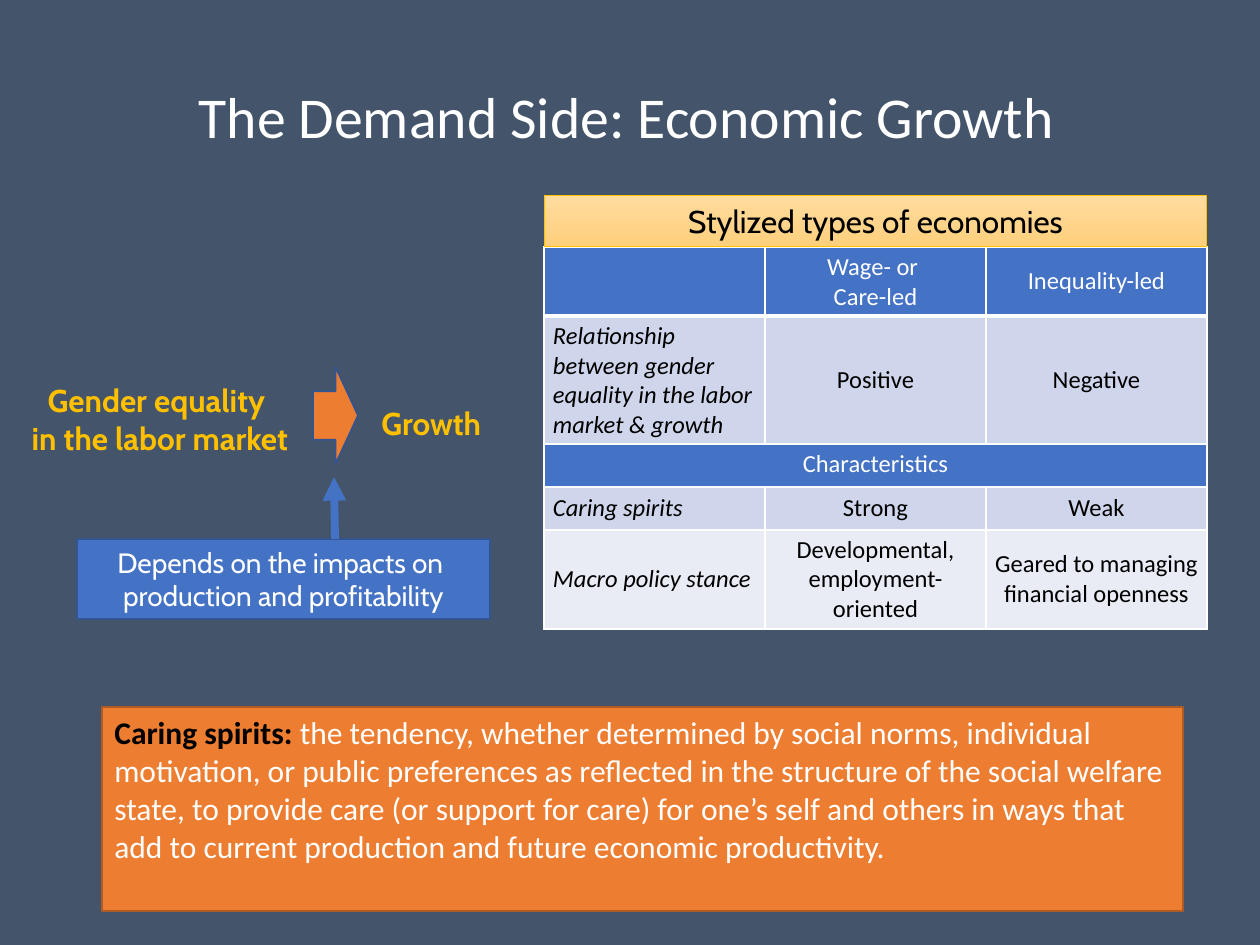
from lxml import etree
from pptx import Presentation
from pptx.dml.color import RGBColor
from pptx.enum.shapes import MSO_CONNECTOR, MSO_SHAPE
from pptx.enum.text import MSO_ANCHOR, PP_ALIGN
from pptx.oxml.ns import qn
from pptx.util import Emu, Pt

LEFT, MID = PP_ALIGN.LEFT, PP_ALIGN.CENTER
TOP, CENTER = MSO_ANCHOR.TOP, MSO_ANCHOR.MIDDLE
RECT, ARROW = MSO_SHAPE.RECTANGLE, MSO_SHAPE.UP_ARROW
STRAIGHT = MSO_CONNECTOR.STRAIGHT
WHITE = RGBColor(0xFF, 0xFF, 0xFF)
BLACK = RGBColor(0, 0, 0)
SLATE = RGBColor(0x44, 0x54, 0x6A)
BLUE = RGBColor(0x44, 0x72, 0xC4)
NAVY = RGBColor(0x32, 0x54, 0x91)
ORANGE = RGBColor(0xED, 0x7D, 0x31)
RUST = RGBColor(0xAF, 0x5C, 0x24)
GOLD = RGBColor(0xFF, 0xC0, 0x00)
CREAM = RGBColor(0xFF, 0xDB, 0x9E)
SAND = RGBColor(0xFF, 0xD0, 0x7C)
PALE = RGBColor(0xCF, 0xD5, 0xEA)
MIST = RGBColor(0xE9, 0xEB, 0xF5)

ROWS = [
    (69, BLUE, ["", "Wage- or \nCare-led", "Inequality-led"]),
    (128, PALE, ["Relationship between gender equality in the labor market & growth",
                 "Positive", "Negative"]),
    (43, BLUE, ["Characteristics", "", ""]),
    (43, PALE, ["Caring spirits", "Strong", "Weak"]),
    (99, MIST, ["Macro policy stance", "Developmental, employment-oriented",
                "Geared to managing financial openness"]),
]
TERM = "Caring spirits: "
SENSE = ("the tendency, whether determined by social norms, individual motivation, "
         "or public preferences as reflected in the structure of the social welfare "
         "state, to provide care (or support for care) for one’s self and others in "
         "ways that add to current production and future economic productivity.")


def px(n):
    """Turn pixels into EMU."""
    return Emu(round(n * 914400 / 126))


def style(font, size, color, face, bold=False, italic=False):
    """Set the look of a font."""
    font.size, font.name, font.bold, font.italic = Pt(size), face, bold, italic
    font.color.rgb = color


def write(frame, text, size, color, face, align=MID, **look):
    """Fill a text frame, one paragraph for each line."""
    frame.word_wrap = True
    for i, line in enumerate(text.split("\n")):
        par = frame.add_paragraph() if i else frame.paragraphs[0]
        par.text, par.alignment = line, align
        style(par.font, size, color, face, **look)


def label(shapes, box, *text, **look):
    """Add a text box and return its frame."""
    frame = shapes.add_textbox(*map(px, box)).text_frame
    write(frame, *text, **look)
    return frame


def block(shapes, kind, box, fill, edge, width=1):
    """Add a filled shape with an outline."""
    shape = shapes.add_shape(kind, *map(px, box))
    shape.shadow.inherit = False
    shape.fill.solid()
    shape.fill.fore_color.rgb = fill
    shape.line.color.rgb, shape.line.width = edge, Pt(width)
    shape.text_frame.vertical_anchor = TOP
    return shape


def border(cell, base):
    """Draw white cell borders with the given bottom width."""
    props = cell._tc.get_or_add_tcPr()
    for i, (side, width) in enumerate(zip("LRTB", (1, 1, 1, base))):
        line = etree.Element(qn(f"a:ln{side}"), w=str(Pt(width)))
        fill = etree.SubElement(line, qn("a:solidFill"))
        etree.SubElement(fill, qn("a:srgbClr"), val=str(WHITE))
        props.insert(i, line)


def title(shapes, box):
    """Place the slide title."""
    frame = label(shapes, box, "The Demand Side: Economic Growth", 33, WHITE, "Calibri")
    frame.vertical_anchor = CENTER
    frame.paragraphs[0].line_spacing = 0.9


def types(shapes, box):
    """Place the table of economy types under its banner."""
    x, y, w, h = box
    head = 51
    table = shapes.add_table(len(ROWS), 3, *map(px, (x, y + head, w, h - head))).table
    table.first_row = table.horz_banding = False
    for col in table.columns:
        col.width = px(w / 3)
    for r, (tall, fill, texts) in enumerate(ROWS):
        table.rows[r].height = px(tall)
        for c, text in enumerate(texts):
            cell = table.cell(r, c)
            cell.margin_left = cell.margin_right = px(9)
            cell.margin_top = cell.margin_bottom = px(5)
            cell.vertical_anchor = TOP if c == 0 and r in (1, 2) else CENTER
            cell.fill.solid()
            cell.fill.fore_color.rgb = fill
            side = c == 0 and fill != BLUE
            write(cell.text_frame, text, 14, WHITE if fill == BLUE else BLACK,
                  "Calibri", LEFT if side else MID, italic=side)
            border(cell, 1 if r else 3)
    table.cell(2, 0).merge(table.cell(2, 2))
    banner = block(shapes, RECT, (x, y, w, head), CREAM, GOLD, 0.5)
    banner.fill.gradient()
    banner.fill.gradient_angle = 270
    for stop, color in zip(banner.fill.gradient_stops, (CREAM, SAND)):
        stop.color.rgb = color
    write(banner.text_frame, "Stylized types of economies", 18, BLACK, "Cabin")


def note(shapes, box):
    """Place the definition of caring spirits."""
    frame = block(shapes, RECT, box, ORANGE, RUST).text_frame
    frame.word_wrap = True
    par = frame.paragraphs[0]
    par.alignment = LEFT
    for text, color, bold in ((TERM, BLACK, True), (SENSE, WHITE, False)):
        run = par.add_run()
        run.text = text
        style(run.font, 18, color, "Calibri", bold)


def flow(shapes, box):
    """Place the link from equality to growth and its condition."""
    x, y = box[:2]
    parts = shapes.add_group_shape().shapes
    label(parts, (x, y, 352, 89), "Gender equality \nin the labor market",
          18, GOLD, "Cabin", bold=True)
    base = block(parts, RECT, (x + 93, y + 164, 413, 80), BLUE, NAVY)
    write(base.text_frame, "Depends on the impacts on \nproduction and profitability",
          16, WHITE, "Cabin")
    arrow = block(parts, ARROW, (x + 303, y + 18, 97, 45), ORANGE, NAVY)
    arrow.rotation = 90
    label(parts, (x + 385, y + 23, 175, 50), "Growth", 18, GOLD, "Cabin", LEFT, bold=True)
    ends = (x + 351, y + 164, x + 350, y + 102)
    link = parts.add_connector(STRAIGHT, *map(px, ends))
    link.line.color.rgb, link.line.width = BLUE, Pt(4.5)
    etree.SubElement(link.line._get_or_add_ln(), qn("a:tailEnd"), type="triangle")
    etree.SubElement(link._element.spPr, qn("a:effectLst"))


def main():
    """Build and save the slide."""
    deck = Presentation()
    deck.slide_width, deck.slide_height = px(1260), px(945)
    slide = deck.slides.add_slide(deck.slide_layouts[6])
    slide.background.fill.solid()
    slide.background.fill.fore_color.rgb = SLATE
    shapes = slide.shapes
    title(shapes, (18, 15, 1217, 209))
    types(shapes, (544, 196, 663, 433))
    note(shapes, (102, 707, 1081, 204))
    flow(shapes, (-16, 375, 560, 244))
    deck.save("out.pptx")


if __name__ == "__main__":
    main()
